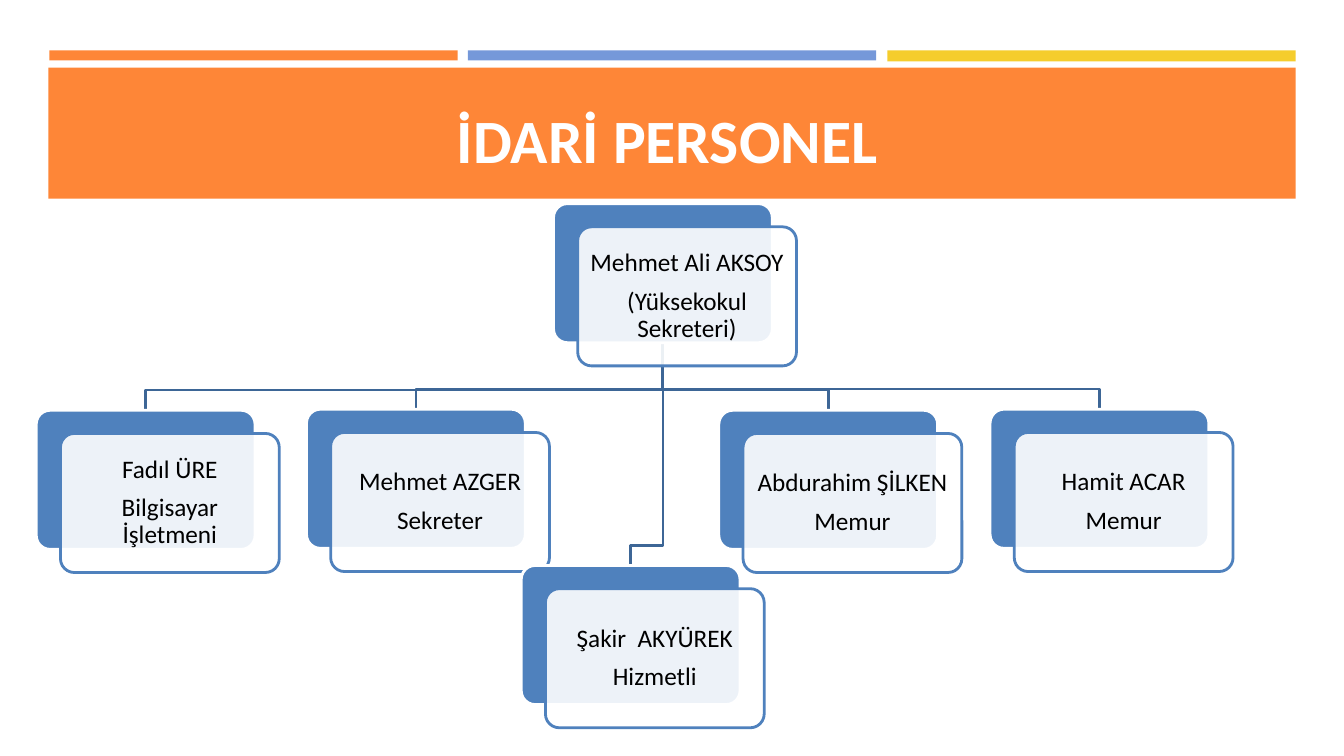
from typing import NamedTuple

from lxml import etree
from pptx import Presentation
from pptx.dml.color import RGBColor
from pptx.enum.shapes import MSO_SHAPE
from pptx.enum.text import MSO_ANCHOR, MSO_AUTO_SIZE, PP_ALIGN
from pptx.oxml.ns import qn
from pptx.util import Inches, Pt

RECTANGLE, ROUNDED = MSO_SHAPE.RECTANGLE, MSO_SHAPE.ROUNDED_RECTANGLE
CENTER = PP_ALIGN.CENTER
MIDDLE, BOTTOM = MSO_ANCHOR.MIDDLE, MSO_ANCHOR.BOTTOM
NO_AUTOFIT = MSO_AUTO_SIZE.NONE

COLORS = {
    "orange": "FE8637", "periwinkle": "7598D9", "yellow": "F5CD2D",
    "box": "4F81BD", "link": "3D6696", "white": "FFFFFF", "text": "000000",
}
FONT_NAME = "Calibri"
BOX_WIDTH, BOX_HEIGHT = 2.17, 1.38
CARD_SHIFT_X, CARD_SHIFT_Y = 0.24, 0.23
LINK_DROP = 0.2
CARD_INSET = 0.08


class Bar(NamedTuple):
    left: float
    top: float
    width: float
    height: float
    color: str


class Person(NamedTuple):
    left: float
    top: float
    name: str
    role: str


BARS = [
    Bar(0.49, 0.5, 4.05, 0.1, "orange"),
    Bar(8.8, 0.5, 4.05, 0.11, "yellow"),
    Bar(4.64, 0.5, 4.05, 0.1, "periwinkle"),
    Bar(0.48, 0.67, 12.37, 1.3, "orange"),
]
SECRETARY = Person(5.49, 2.02, "Mehmet Ali AKSOY", "(Yüksekokul Sekreteri)")
STAFF = [
    Person(0.36, 4.07, "Fadıl ÜRE", "Bilgisayar İşletmeni"),
    Person(3.04, 4.06, "Mehmet AZGER", "Sekreter"),
    Person(7.13, 4.07, "Abdurahim ŞİLKEN", "Memur"),
    Person(9.82, 4.06, "Hamit ACAR", "Memur"),
    Person(5.17, 5.61, "Şakir  AKYÜREK", "Hizmetli"),
]


def rgb(color: str) -> RGBColor:
    return RGBColor.from_string(COLORS[color])


def apply_format(target, values: dict) -> None:
    for attribute, value in values.items():
        setattr(target, attribute, value)


def set_line(shape, color: str) -> None:
    shape.line.color.rgb = rgb(color)
    shape.line.width = Pt(2)


def format_text(paragraph, size: int, color: str, bold: bool = False) -> None:
    paragraph.alignment = CENTER
    apply_format(paragraph.font, {"name": FONT_NAME, "size": Pt(size), "bold": bold})
    paragraph.font.color.rgb = rgb(color)


def add_filled(slide, kind, left: float, top: float, width: float, height: float, color: str):
    shape = slide.shapes.add_shape(
        kind, Inches(left), Inches(top), Inches(width), Inches(height))
    shape.shadow.inherit = False
    shape.fill.solid()
    shape.fill.fore_color.rgb = rgb(color)
    return shape


def add_bar(slide, bar: Bar) -> None:
    add_filled(slide, RECTANGLE, *bar).line.fill.background()


def add_title(slide, text: str) -> None:
    title = slide.shapes.title
    apply_format(title, {"left": Inches(0.59), "top": Inches(0.68),
                         "width": Inches(12.06), "height": Inches(1.11)})
    title.text_frame.text = text
    apply_format(title.text_frame, {"auto_size": NO_AUTOFIT, "vertical_anchor": BOTTOM})
    format_text(title.text_frame.paragraphs[0], 44, "white", bold=True)
    # Bring the title in front of its banner
    slide.shapes.element.append(title.element)


def add_link(slide, parent: Person, child: Person) -> None:
    start_x, start_y = parent.left + BOX_WIDTH / 2, parent.top + BOX_HEIGHT
    end_x, bend_y = child.left + BOX_WIDTH / 2, child.top - LINK_DROP
    builder = slide.shapes.build_freeform(Inches(start_x), Inches(start_y))
    corners = [(start_x, bend_y), (end_x, bend_y), (end_x, child.top)]
    builder.add_line_segments([(Inches(x), Inches(y)) for x, y in corners], close=False)
    link = builder.convert_to_shape()
    link.shadow.inherit = False
    link.fill.background()
    set_line(link, "link")


def add_person(slide, person: Person) -> None:
    back = add_filled(slide, ROUNDED, person.left, person.top, BOX_WIDTH, BOX_HEIGHT, "box")
    set_line(back, "white")
    card = add_filled(slide, ROUNDED, person.left + CARD_SHIFT_X,
                      person.top + CARD_SHIFT_Y, BOX_WIDTH, BOX_HEIGHT, "white")
    set_line(card, "box")
    for shape in (back, card):
        shape.adjustments[0] = 0.1

    # Slightly transparent card over the blue box
    fill_color = card.element.spPr.find(qn("a:solidFill")).find(qn("a:srgbClr"))
    etree.SubElement(fill_color, qn("a:alpha")).set("val", "90000")

    frame = card.text_frame
    inset = Inches(CARD_INSET)
    apply_format(frame, {
        "text": f"{person.name}\n{person.role}", "word_wrap": True,
        "vertical_anchor": MIDDLE, "margin_left": inset, "margin_right": inset,
        "margin_top": inset, "margin_bottom": inset,
    })
    for paragraph in frame.paragraphs:
        apply_format(paragraph, {"line_spacing": 0.9, "space_after": Pt(8)})
        format_text(paragraph, 18, "text")


def main() -> None:
    presentation = Presentation()
    presentation.slide_width = Inches(13.33)
    presentation.slide_height = Inches(7.5)
    slide = presentation.slides.add_slide(presentation.slide_layouts[5])

    # Header
    for bar in BARS:
        add_bar(slide, bar)
    add_title(slide, "İDARİ PERSONEL")

    # Organisation chart: links lie behind the boxes
    for person in STAFF:
        add_link(slide, SECRETARY, person)
    for person in [SECRETARY, *STAFF]:
        add_person(slide, person)

    presentation.save("out.pptx")


if __name__ == "__main__":
    main()
